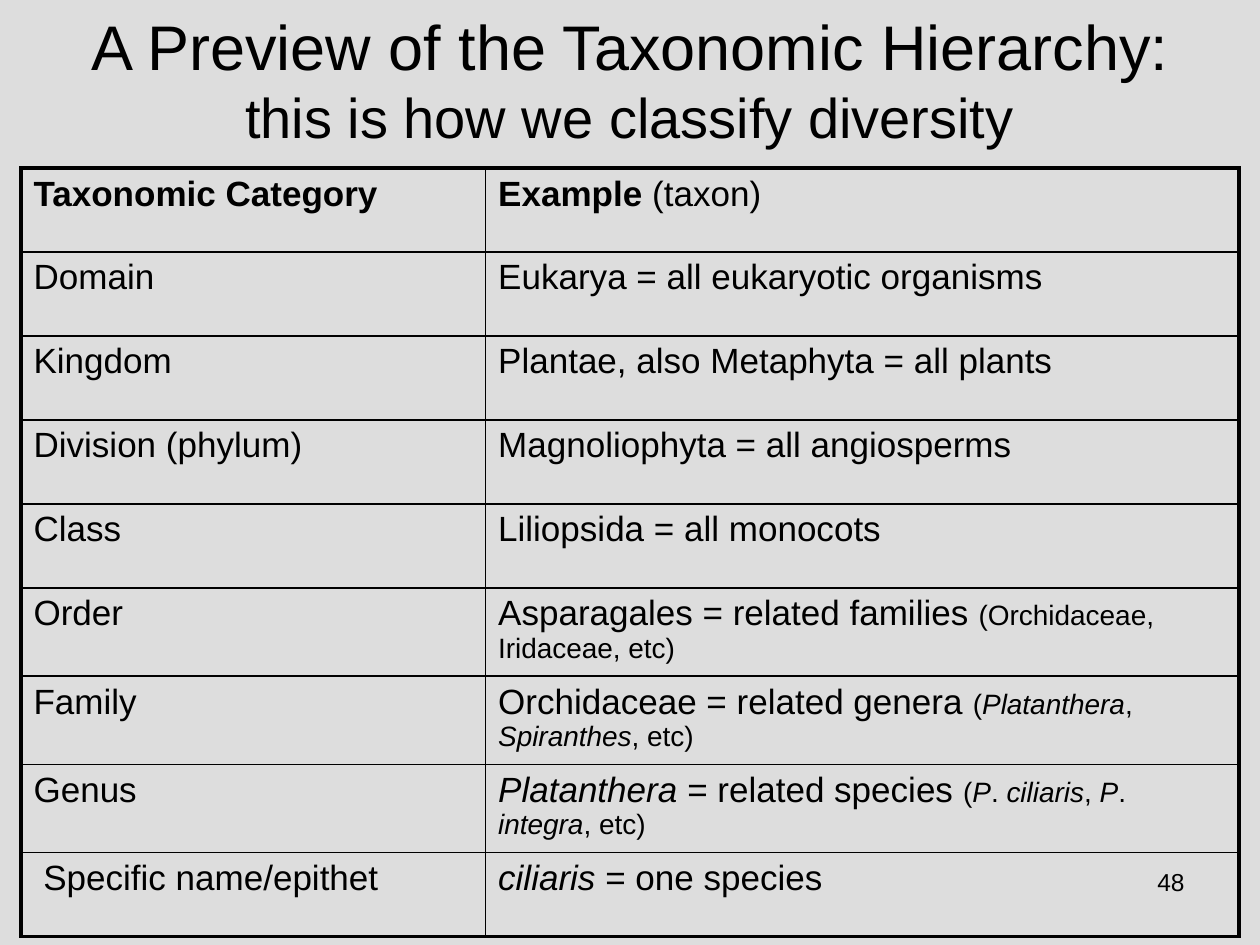
from dataclasses import dataclass
from lxml.etree import SubElement
from pptx import Presentation
from pptx.dml.color import RGBColor
from pptx.enum.text import MSO_ANCHOR as Anchor, PP_ALIGN as Align
from pptx.oxml.ns import qn
from pptx.util import Pt


@dataclass(frozen=True)
class Theme:
    font: str = "Arial"
    ink: str = "000000"
    paper: str = "DDDDDD"
    title: int = 36
    subtitle: int = 32
    body: int = 20
    small: int = 16
    number: int = 14
    thick: float = 2.25
    thin: float = 1


ROWS = [
    ([("Taxonomic Category", "b")], [("Example", "b"), (" (taxon)", "")]),
    ([("Domain", "")], [("Eukarya = all eukaryotic organisms", "")]),
    ([("Kingdom", "")], [("Plantae, also Metaphyta = all plants", "")]),
    ([("Division (phylum)", "")], [("Magnoliophyta = all angiosperms", "")]),
    ([("Class", "")], [("Liliopsida = all monocots", "")]),
    ([("Order", "")], [("Asparagales = related families ", ""),
                       ("(Orchidaceae, Iridaceae, etc)", "s")]),
    ([("Family", "")], [("Orchidaceae = related genera ", ""), ("(", "s"),
                        ("Platanthera", "si"), (", ", "s"),
                        ("Spiranthes", "si"), (", etc)", "s")]),
    ([("Genus", "")], [("Platanthera", "i"), (" = related species ", ""),
                       ("(", "s"), ("P", "si"), (".", "s"), (" ciliaris", "si"),
                       (", ", "s"), ("P", "si"), (".", "s"), (" integra", "si"),
                       (", etc)", "s")]),
    ([(" Specific name/epithet", "")],
     [("ciliaris", "i"), (" = one species", "")]),
]


class Deck:
    def __init__(self, theme, width, height):
        self.theme = theme
        self.prs = Presentation()
        self.prs.slide_width, self.prs.slide_height = Pt(width), Pt(height)
        self.s = self.prs.slides.add_slide(self.prs.slide_layouts[6])
        fill = self.s.background.fill
        fill.solid()
        fill.fore_color.rgb = RGBColor.from_string(theme.paper)

    def style(self, r, size, marks=""):
        r.font.name = self.theme.font
        r.font.size = Pt(size)
        r.font.bold = "b" in marks
        r.font.italic = "i" in marks
        r.font.color.rgb = RGBColor.from_string(self.theme.ink)

    def text(self, text, box, sizes, align, anchor=Anchor.TOP):
        tf = self.s.shapes.add_textbox(*map(Pt, box)).text_frame
        tf.word_wrap = True
        tf.vertical_anchor = anchor
        p = tf.paragraphs[0]
        p.text = text
        p.alignment = align
        for r, size in zip(p.runs, sizes):
            self.style(r, size)

    def border(self, cell, side, width):
        tc_pr = cell._tc.get_or_add_tcPr()
        ln = SubElement(tc_pr, qn(f"a:ln{side}"), w=str(Pt(width)))
        fill = SubElement(ln, qn("a:solidFill"))
        SubElement(fill, qn("a:srgbClr"), val=self.theme.ink)

    def table(self, rows, box, widths):
        t = self.theme
        n_rows, n_cols = len(rows), len(widths)
        table = self.s.shapes.add_table(n_rows, n_cols, *map(Pt, box)).table
        table.first_row = table.horz_banding = False
        for column, width in zip(table.columns, widths):
            column.width = Pt(width)
        for i, row in enumerate(rows):
            table.rows[i].height = Pt(box[3] / n_rows)
            for j, runs in enumerate(row):
                cell = table.cell(i, j)
                edges = {"L": j == 0, "R": j == n_cols - 1,
                         "T": i == 0, "B": i == n_rows - 1}
                for side, outer in edges.items():
                    self.border(cell, side, t.thick if outer else t.thin)
                cell.fill.background()
                p = cell.text_frame.paragraphs[0]
                for text, marks in runs:
                    r = p.add_run()
                    r.text = text
                    self.style(r, t.small if "s" in marks else t.body, marks)


def main():
    theme = Theme()
    deck = Deck(theme, 720, 540)
    deck.text("48", (516, 492, 168, 37.5), [theme.number], Align.RIGHT)
    deck.text("A Preview of the Taxonomic Hierarchy:\v"
              "this is how we classify diversity",
              (36, 0, 648, 90), [theme.title, theme.subtitle],
              Align.CENTER, Anchor.MIDDLE)
    deck.table(ROWS, (12, 96, 696, 432), (265.5, 430.5))
    deck.prs.save("out.pptx")


if __name__ == "__main__":
    main()
